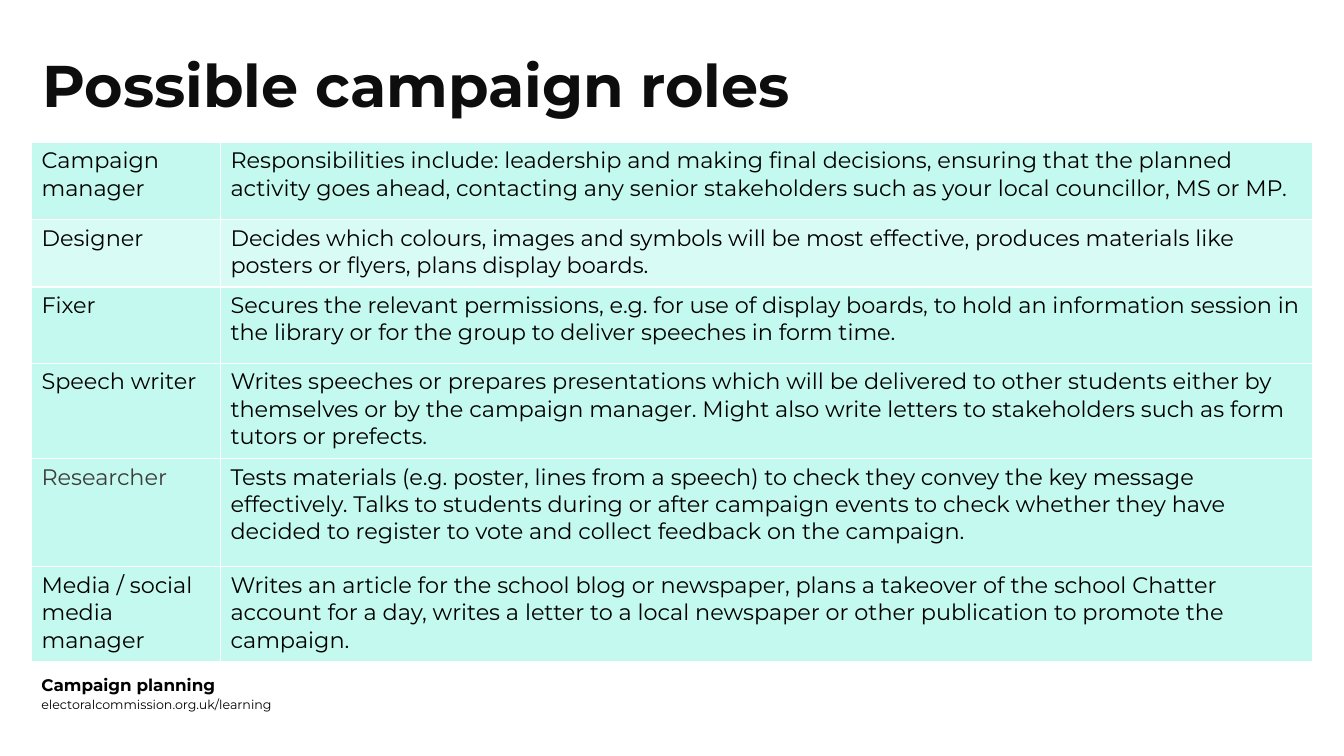
"""Build the slide of possible campaign roles."""
from lxml.etree import SubElement
from pptx import Presentation
from pptx.dml.color import RGBColor
from pptx.enum.text import MSO_ANCHOR, MSO_AUTO_SIZE, PP_ALIGN
from pptx.oxml import parse_xml
from pptx.oxml.ns import nsdecls, qn
from pptx.util import Pt

HUES = {"title": "0D0D0D", "text": "000000", "soft": "3C3C3B",
        "mint": "00E7BD", "edge": "FFFFFF"}
ROLES = [
    ("Campaign manager", "Responsibilities include: leadership and making final decisions, "
     "ensuring that the planned activity goes ahead, contacting any senior stakeholders "
     "such as your local councillor, MS or MP.", 55.5),
    ("Designer", "Decides which colours, images and symbols will be most effective, "
     "produces materials like posters or flyers, plans display boards.", 48),
    ("Fixer", "Secures the relevant permissions, e.g. for use of display boards, to hold "
     "an information session in the library or for the group to deliver speeches in "
     "form time.", 54.5),
    ("Speech writer", "Writes speeches or prepares presentations which will be delivered to "
     "other students either by themselves or by the campaign manager. Might also write "
     "letters to stakeholders such as form tutors or prefects.", 68),
    ("Researcher", "Tests materials (e.g. poster, lines from a speech) to check they convey "
     "the key message effectively. Talks to students during or after campaign events to "
     "check whether they have decided to register to vote and collect feedback on the "
     "campaign.", 77.5),
    ("Media / social media manager", "Writes an article for the school blog or newspaper, "
     "plans a takeover of the school Chatter account for a day, writes a letter to a local "
     "newspaper or other publication to promote the campaign.", 68),
]


def write(frame, text, size, hue, bold=False):
    frame.text = text
    frame.word_wrap = True
    para = frame.paragraphs[0]
    para.alignment = PP_ALIGN.LEFT
    font = para.runs[0].font
    font.name, font.size, font.bold = "Montserrat", Pt(size), bold
    font.color.rgb = RGBColor.from_string(HUES[hue])
    return para


def paint(cell, alpha):
    cell.fill.solid()
    cell.fill.fore_color.rgb = RGBColor.from_string(HUES["mint"])
    props = cell._tc.get_or_add_tcPr()
    shade = props.find(qn("a:solidFill"))[0]
    SubElement(shade, qn("a:alpha")).set("val", str(alpha * 1000))
    for spot, side in enumerate(("lnL", "lnR", "lnT", "lnB")):
        props.insert(spot, parse_xml(
            f'<a:{side} {nsdecls("a")} w="{Pt(1)}"><a:solidFill>'
            f'<a:srgbClr val="{HUES["edge"]}"/></a:solidFill></a:{side}>'))


deck = Presentation()
deck.slide_width, deck.slide_height = Pt(960), Pt(540)
slide = deck.slides.add_slide(deck.slide_layouts[5])

title = slide.shapes.title
title.left, title.top, title.width, title.height = Pt(23), Pt(36.5), Pt(716), Pt(54)
head = write(title.text_frame, "Possible campaign roles", 42, "title", True)
head.line_spacing = 0.9
title.text_frame.auto_size = MSO_AUTO_SIZE.NONE
title.text_frame.vertical_anchor = MSO_ANCHOR.MIDDLE

high = sum(role[2] for role in ROLES)
grid = slide.shapes.add_table(len(ROLES), 2, Pt(22.5), Pt(101.5), Pt(915), Pt(high)).table
grid.first_row = grid.horz_banding = False
grid.columns[0].width, grid.columns[1].width = Pt(135), Pt(780)
for row, (name, duty, tall) in zip(grid.rows, ROLES):
    row.height = Pt(tall)
    for cell, text in zip(row.cells, (name, duty)):
        para = write(cell.text_frame, text, 16, "soft" if text == "Researcher" else "text")
        para.space_after = Pt(2)
        paint(cell, 15 if name == "Designer" else 23)

for top, text, size, bold in ((474.5, "Campaign planning", 12, True),
                              (489, "electoralcommission.org.uk/learning", 9, False)):
    box = slide.shapes.add_textbox(Pt(22.5), Pt(top), Pt(551), Pt(29))
    write(box.text_frame, text, size, "text", bold)
    box.text_frame.vertical_anchor = MSO_ANCHOR.MIDDLE

deck.save("out.pptx")
